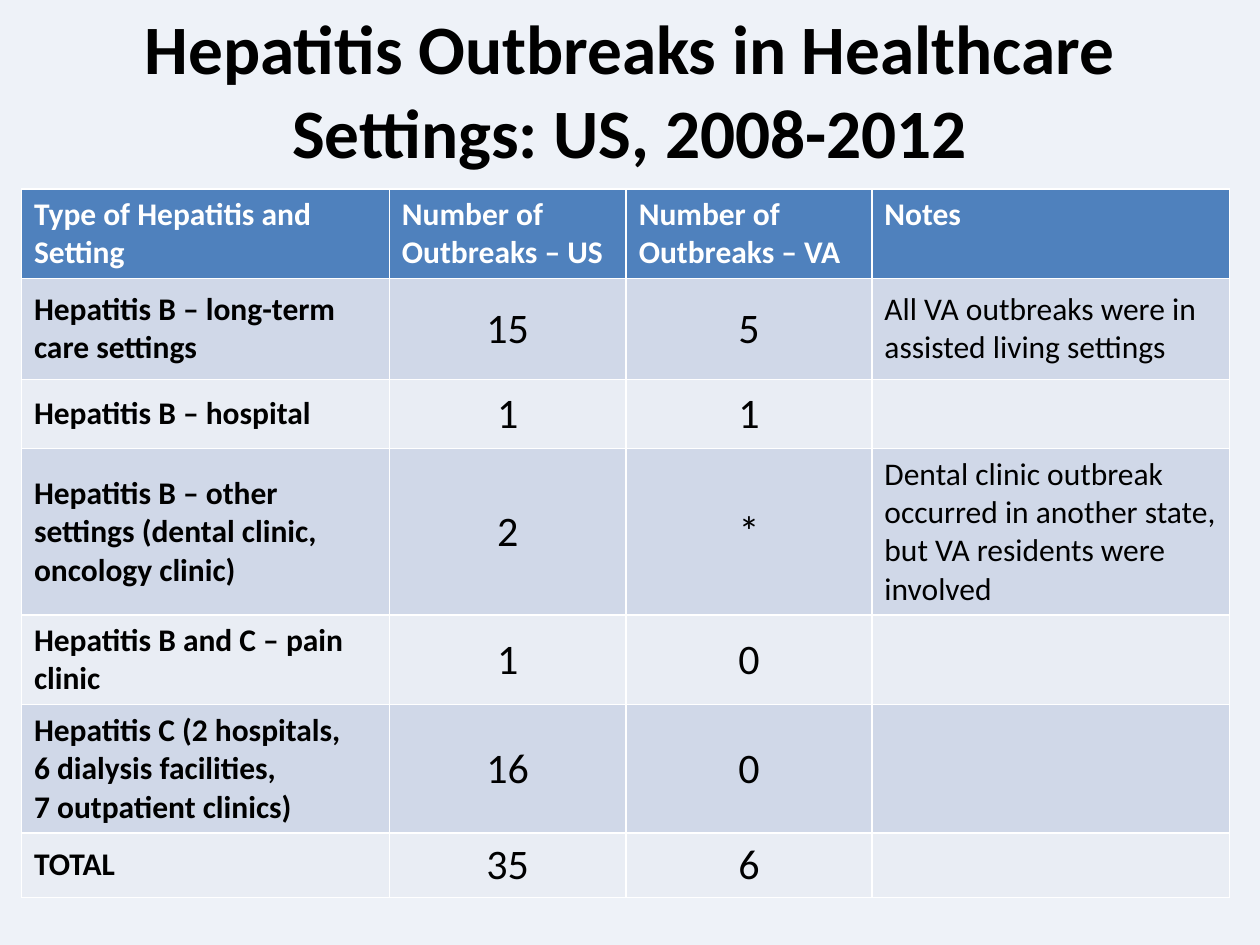
from pptx import Presentation
from pptx.dml.color import RGBColor
from pptx.enum.text import MSO_ANCHOR, PP_ALIGN
from pptx.util import Inches, Pt

COLORS = {
    "background": "EEF2F8",
    "header": "4F81BD",
    "odd_row": "D0D8E8",
    "even_row": "E9EDF4",
    "header_text": "FFFFFF",
    "text": "000000",
}
FONT = "Calibri"
HEADINGS = ["Type of Hepatitis and Setting", "Number of Outbreaks – US",
            "Number of Outbreaks – VA", "Notes"]
OUTBREAKS = [
    ["Hepatitis B – long-term care settings", "15", "5",
     "All VA outbreaks were in assisted living settings"],
    ["Hepatitis B – hospital", "1", "1", ""],
    ["Hepatitis B – other settings (dental clinic, oncology clinic)", "2", "*",
     "Dental clinic outbreak occurred in another state, but VA residents were involved"],
    ["Hepatitis B and C – pain clinic", "1", "0", ""],
    ["Hepatitis C (2 hospitals,\n6 dialysis facilities,\n7 outpatient clinics)", "16", "0", ""],
    ["TOTAL", "35", "6", ""],
]
COLUMN_WIDTHS = [2.92, 1.88, 1.95, 2.84]
ROW_HEIGHTS = [0.7, 0.8, 0.55, 1.32, 0.71, 1.02, 0.51]


def add_text(paragraph, text, size, color, bold):
    """Add one run per line, with a line break between lines."""
    for number, line in enumerate(text.split("\n")):
        if number:
            paragraph.add_line_break()
        run = paragraph.add_run()
        run.text = line
        run.font.name = FONT
        run.font.size = Pt(size)
        run.font.bold = bold
        run.font.color.rgb = RGBColor.from_string(COLORS[color])


prs = Presentation()
prs.slide_width, prs.slide_height = Inches(10), Inches(7.5)
slide = prs.slides.add_slide(prs.slide_layouts[5])
slide.background.fill.solid()
slide.background.fill.fore_color.rgb = RGBColor.from_string(COLORS["background"])

title = slide.shapes.title
title.left, title.top = Inches(0.5), Inches(0.08)
title.width, title.height = Inches(9), Inches(1.25)
title.text_frame.vertical_anchor = MSO_ANCHOR.MIDDLE
heading = title.text_frame.paragraphs[0]
heading.alignment = PP_ALIGN.CENTER
add_text(heading, "Hepatitis Outbreaks in Healthcare Settings: US, 2008-2012", 39.6, "text", True)

# The default table style supplies the white rules between cells
table = slide.shapes.add_table(
    len(ROW_HEIGHTS), len(COLUMN_WIDTHS), Inches(0.17), Inches(1.5),
    Inches(sum(COLUMN_WIDTHS)), Inches(sum(ROW_HEIGHTS))).table
for column, width in zip(table.columns, COLUMN_WIDTHS):
    column.width = Inches(width)
for row, height in zip(table.rows, ROW_HEIGHTS):
    row.height = Inches(height)

for r, texts in enumerate([HEADINGS] + OUTBREAKS):
    is_header = r == 0
    fill = "header" if is_header else "odd_row" if r % 2 else "even_row"
    for c, text in enumerate(texts):
        is_count = not is_header and c in (1, 2)
        cell = table.cell(r, c)
        cell.fill.solid()
        cell.fill.fore_color.rgb = RGBColor.from_string(COLORS[fill])
        cell.vertical_anchor = MSO_ANCHOR.TOP if is_header else MSO_ANCHOR.MIDDLE
        if text:
            paragraph = cell.text_frame.paragraphs[0]
            paragraph.alignment = PP_ALIGN.CENTER if is_count else PP_ALIGN.LEFT
            add_text(paragraph, text, 24 if is_count else 18,
                     "header_text" if is_header else "text", is_header or c == 0)

prs.save("out.pptx")
